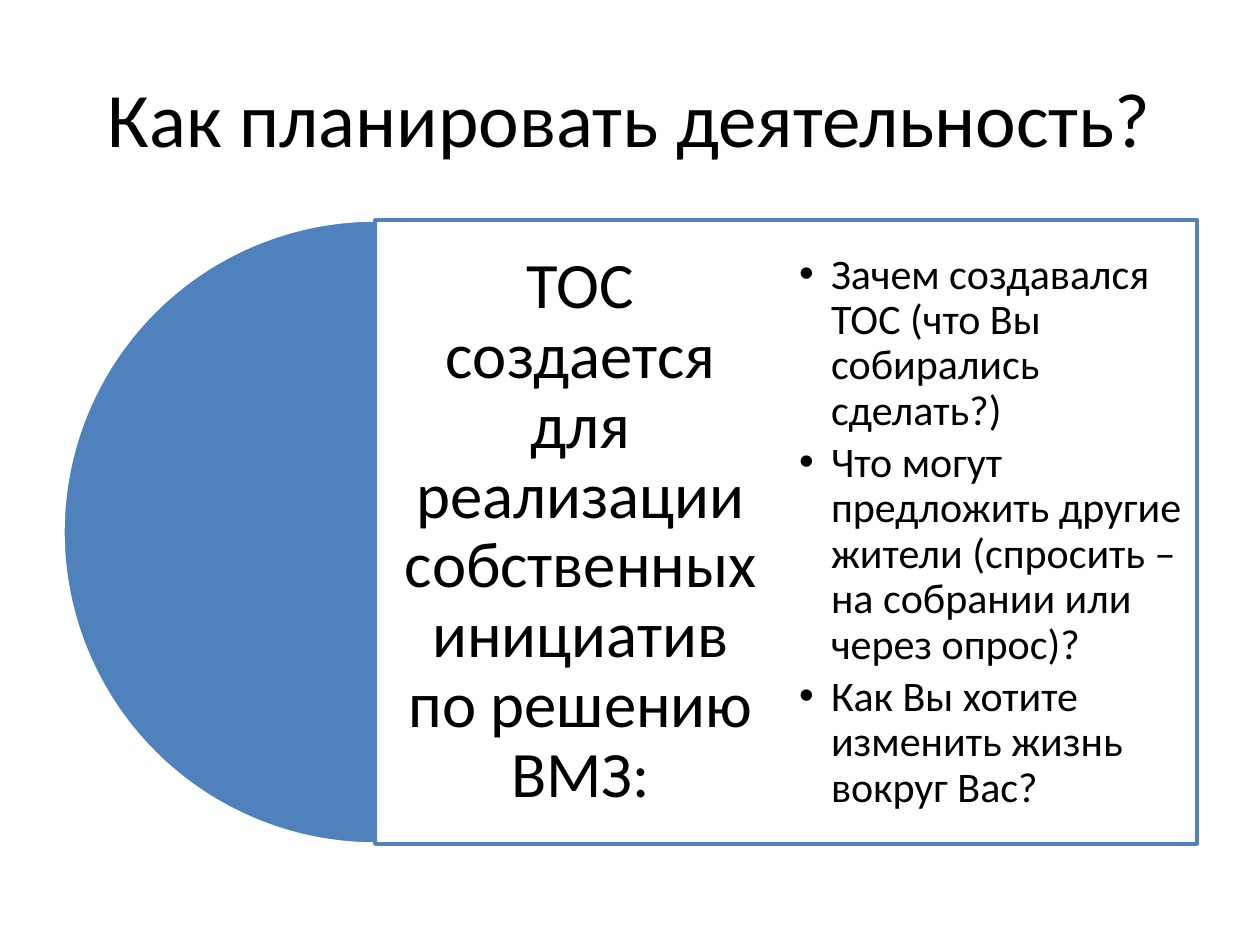
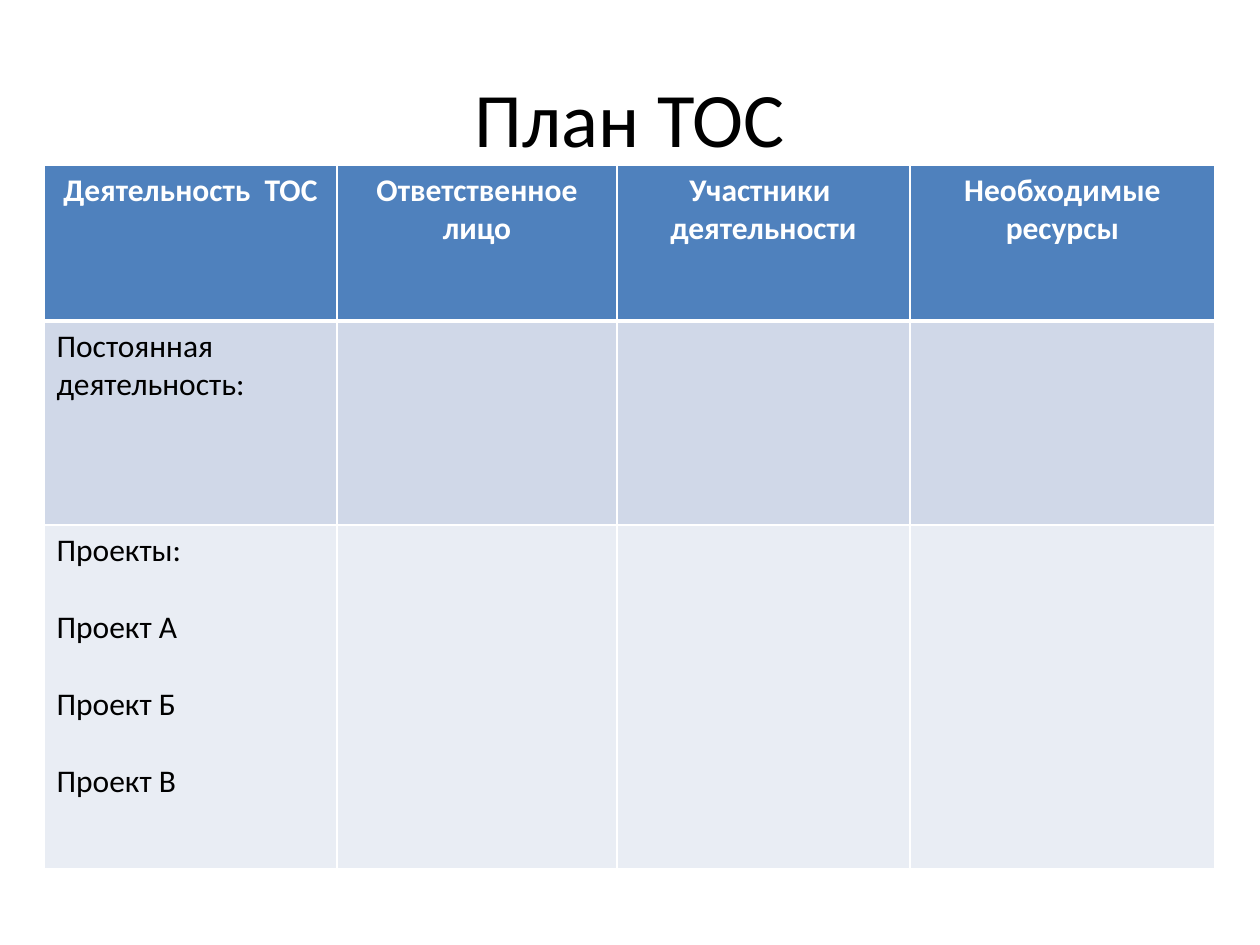
import lxml.etree
import pptx
import pptx.dml.color
import pptx.enum.shapes
import pptx.enum.text
import pptx.oxml.ns
import pptx.util

# Content
PURPOSE_TITLE = "Как планировать деятельность?"
PURPOSE = "ТОС создается для реализации собственных инициатив по решению ВМЗ:"
QUESTIONS = [
    "Зачем создавался ТОС (что Вы собирались сделать?)",
    "Что могут предложить другие жители (спросить – на собрании или через опрос)?",
    "Как Вы хотите изменить жизнь вокруг Вас?",
]
PLAN_TITLE = "План ТОС"
PLAN_HEADINGS = ["Деятельность  ТОС", "Ответственное лицо",
                 "Участники  деятельности", "Необходимые ресурсы"]
PLAN_ACTIVITIES = [
    ["Постоянная деятельность:"],
    ["Проекты:", "Проект А", "Проект Б", "Проект В"],
]

# Shared look
PX = 914400 / 126
FONT = "Calibri"
COLORS = {"accent": "4F81BD", "white": "FFFFFF", "black": "000000",
          "band_dark": "D0D8E8", "band_light": "E9EDF4"}
ALIGN = pptx.enum.text.PP_ALIGN
MIDDLE = pptx.enum.text.MSO_ANCHOR.MIDDLE
SHAPE = pptx.enum.shapes.MSO_SHAPE

# Layout in px
SLIDE_SIZE = (1260, 945)
TITLE_BOX = (63, 38, 1134, 157)
DIAGRAM_LEFT, DIAGRAM_TOP, DIAGRAM_SIZE, DIAGRAM_RIGHT = 63, 220, 624, 1197
TABLE_LEFT, TABLE_TOP = 44, 165
COLUMN_WIDTHS = [293, 280, 293, 305]
ROW_HEIGHTS = [156, 204, 344]


def emu(*lengths):
    return [pptx.util.Emu(round(length * PX)) for length in lengths]


def rgb(name):
    return pptx.dml.color.RGBColor.from_string(COLORS[name])


def assign(target, values):
    for name, value in values.items():
        setattr(target, name, value)


def add_xml(parent, tag, **attributes):
    return lxml.etree.SubElement(parent, pptx.oxml.ns.qn(tag), attributes)


def write(frame, texts, size, color="black", bold=False, **paragraph_format):
    """Fill a text frame, one paragraph for each text."""
    frame.word_wrap = True
    for index, text in enumerate(texts):
        paragraph = frame.add_paragraph() if index else frame.paragraphs[0]
        assign(paragraph, paragraph_format)
        run = paragraph.add_run()
        run.text = text
        assign(run.font, {"name": FONT, "size": pptx.util.Pt(size), "bold": bold})
        run.font.color.rgb = rgb(color)
    return frame.paragraphs


def add_titled_slide(deck, title):
    slide = deck.slides.add_slide(deck.slide_layouts[5])
    heading = slide.shapes.title
    assign(heading, dict(zip(("left", "top", "width", "height"), emu(*TITLE_BOX))))
    heading.text_frame.vertical_anchor = MIDDLE
    write(heading.text_frame, [title], 44, alignment=ALIGN.CENTER)
    return slide


def add_figure(slide, preset, box, fill, line):
    figure = slide.shapes.add_shape(preset, *emu(*box))
    figure.shadow.inherit = False
    figure.fill.solid()
    figure.fill.fore_color.rgb = rgb(fill)
    figure.line.color.rgb = rgb(line)
    figure.line.width = pptx.util.Pt(2)
    return figure


def add_column_text(slide, box, inset, texts, size, **paragraph_format):
    frame = slide.shapes.add_textbox(*emu(*box)).text_frame
    sides = ("left", "top", "right", "bottom")
    assign(frame, {f"margin_{side}": emu(inset)[0] for side in sides})
    frame.vertical_anchor = MIDDLE
    return write(frame, texts, size, line_spacing=0.9, **paragraph_format)


def add_bullet(paragraph):
    properties = paragraph._p.get_or_add_pPr()
    indent = emu(32)[0]
    properties.set("marL", str(indent))
    properties.set("indent", str(-indent))
    add_xml(properties, "a:buFont", typeface="Arial")
    add_xml(properties, "a:buChar", char="•")


def add_borders(cell, **widths):
    properties = cell._tc.get_or_add_tcPr()
    for side in "LRTB":
        width = pptx.util.Pt(widths.get(side, 1))
        border = add_xml(properties, f"a:ln{side}", w=str(width))
        add_xml(add_xml(border, "a:solidFill"), "a:srgbClr", val=COLORS["white"])


def build_purpose(deck):
    slide = add_titled_slide(deck, PURPOSE_TITLE)
    panel_left = DIAGRAM_LEFT + DIAGRAM_SIZE // 2
    column_width = (DIAGRAM_RIGHT - panel_left) // 2

    # Half disc and the panel beside it
    half_disc = add_figure(slide, SHAPE.PIE,
                           (DIAGRAM_LEFT, DIAGRAM_TOP, DIAGRAM_SIZE, DIAGRAM_SIZE),
                           "accent", "white")
    half_disc.adjustments[0], half_disc.adjustments[1] = 54, 162
    panel = add_figure(slide, SHAPE.RECTANGLE,
                       (panel_left, DIAGRAM_TOP, DIAGRAM_RIGHT - panel_left, DIAGRAM_SIZE),
                       "white", "accent")
    panel_color = panel._element.spPr.find(pptx.oxml.ns.qn("a:solidFill"))[0]
    add_xml(panel_color, "a:alpha", val="90000")

    # Purpose and questions
    purpose_box, questions_box = [
        (panel_left + column * column_width, DIAGRAM_TOP, column_width, DIAGRAM_SIZE)
        for column in range(2)]
    add_column_text(slide, purpose_box, 19, [PURPOSE], 37, alignment=ALIGN.CENTER)
    questions = add_column_text(slide, questions_box, 13, QUESTIONS, 24, level=1,
                                alignment=ALIGN.LEFT, space_after=pptx.util.Pt(4))
    for question in questions:
        add_bullet(question)


def build_plan(deck):
    slide = add_titled_slide(deck, PLAN_TITLE)
    plan = slide.shapes.add_table(
        len(ROW_HEIGHTS), len(COLUMN_WIDTHS),
        *emu(TABLE_LEFT, TABLE_TOP, sum(COLUMN_WIDTHS), sum(ROW_HEIGHTS))).table
    for column, width in zip(plan.columns, emu(*COLUMN_WIDTHS)):
        column.width = width
    for row, height in zip(plan.rows, emu(*ROW_HEIGHTS)):
        row.height = height

    # Fills and borders, with a thick rule under the headings
    row_looks = [("accent", {"B": 3}), ("band_dark", {"T": 3}), ("band_light", {})]
    for row, (fill, rules) in zip(plan.rows, row_looks):
        for cell in row.cells:
            add_borders(cell, **rules)
            cell.fill.solid()
            cell.fill.fore_color.rgb = rgb(fill)

    # Headings and activities
    for column, heading in enumerate(PLAN_HEADINGS):
        write(plan.cell(0, column).text_frame, [heading], 18, "white", True,
              alignment=ALIGN.CENTER)
    for row, activities in enumerate(PLAN_ACTIVITIES, start=1):
        lines = write(plan.cell(row, 0).text_frame, activities, 18)
        for line in lines[1:]:
            line.space_before = pptx.util.Pt(22)


def main():
    deck = pptx.Presentation()
    deck.slide_width, deck.slide_height = emu(*SLIDE_SIZE)
    build_purpose(deck)
    build_plan(deck)
    deck.save("out.pptx")


if __name__ == "__main__":
    main()
